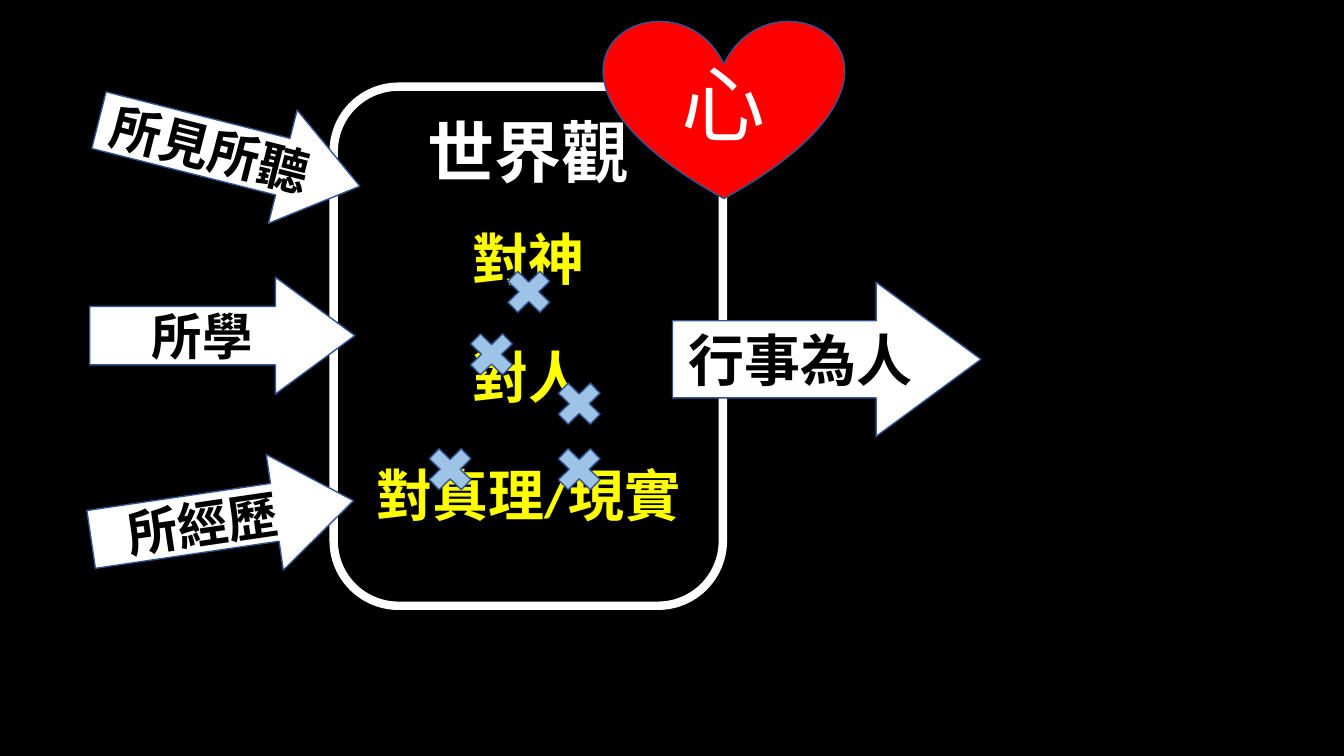
from dataclasses import dataclass

import pptx
import pptx.dml.color
import pptx.enum.shapes
import pptx.enum.text
import pptx.util

PX = 9144
SHAPE = pptx.enum.shapes.MSO_SHAPE
ANCHOR = pptx.enum.text.MSO_ANCHOR
BLACK, WHITE, YELLOW, RED = "000000", "FFFFFF", "FFFF00", "FF0000"
CROSS_BLUE, OUTLINE_BLUE = "9DC3E6", "325491"


@dataclass(frozen=True)
class Line:
    text: str
    size: int
    color: str
    bold: bool = True
    space_before: int = 0


@dataclass(frozen=True)
class Arrow:
    line: Line
    left: int
    top: int
    width: int
    height: int
    rotation: float = 0


@dataclass(frozen=True)
class Cross:
    left: int
    top: int


WORLDVIEW = [
    Line("世界觀", 48, WHITE),
    Line("對神", 40, YELLOW, space_before=24),
    Line("對人", 40, YELLOW, space_before=36),
    Line("對真理/現實", 40, YELLOW, space_before=36),
]
CROSSES = [
    Cross(494, 260),
    Cross(457, 322),
    Cross(416, 436),
    Cross(544, 436),
    Cross(544, 371),
]
ARROWS = [
    Arrow(Line("行事為人", 40, BLACK), 667, 280, 306, 153),
    Arrow(Line("所學", 36, BLACK), 89, 275, 263, 116),
    Arrow(Line("所見所聽", 36, BLACK), 94, 94, 267, 116, 14.2),
    Arrow(Line("所經歷", 36, BLACK), 89, 458, 263, 116, 351.6),
]


def px(n: int) -> int:
    return pptx.util.Emu(n * PX)


def rgb(value: str) -> pptx.dml.color.RGBColor:
    return pptx.dml.color.RGBColor.from_string(value)


def add_shape(s, kind, left: int, top: int, width: int, height: int,
              fill: str, outline: str = OUTLINE_BLUE, weight: int = 1):
    sp = s.shapes.add_shape(kind, px(left), px(top), px(width), px(height))
    sp.shadow.inherit = False
    sp.fill.solid()
    sp.fill.fore_color.rgb = rgb(fill)
    sp.line.color.rgb = rgb(outline)
    sp.line.width = pptx.util.Pt(weight)
    return sp


def write(sp, lines: list[Line], anchor=ANCHOR.MIDDLE) -> None:
    tf = sp.text_frame
    tf.word_wrap = True
    tf.vertical_anchor = anchor
    tf.text = "\n".join(line.text for line in lines)
    for p, line in zip(tf.paragraphs, lines):
        p.alignment = pptx.enum.text.PP_ALIGN.CENTER
        p.space_before = pptx.util.Pt(line.space_before)
        for r in p.runs:
            r.font.name = "Calibri"
            r.font.size = pptx.util.Pt(line.size)
            r.font.bold = line.bold
            r.font.color.rgb = rgb(line.color)


def add_cross(s, cross: Cross) -> None:
    add_shape(s, SHAPE.MATH_MULTIPLY, cross.left, cross.top, 61, 59, CROSS_BLUE)


def add_arrow(s, arrow: Arrow) -> None:
    sp = add_shape(s, SHAPE.RIGHT_ARROW, arrow.left, arrow.top,
                   arrow.width, arrow.height, WHITE)
    sp.adjustments[0] = 0.5
    sp.adjustments[1] = 0.68
    sp.rotation = arrow.rotation
    write(sp, [arrow.line])


def main() -> None:
    prs = pptx.Presentation()
    prs.slide_width = pptx.util.Inches(13.33)
    prs.slide_height = pptx.util.Inches(7.5)
    s = prs.slides.add_slide(prs.slide_layouts[6])
    s.background.fill.solid()
    s.background.fill.fore_color.rgb = rgb(BLACK)

    box = add_shape(s, SHAPE.ROUNDED_RECTANGLE, 331, 86, 386, 515,
                    BLACK, WHITE, 6)
    write(box, WORLDVIEW, ANCHOR.TOP)
    for cross in CROSSES:
        add_cross(s, cross)
    for arrow in ARROWS:
        add_arrow(s, arrow)
    heart = add_shape(s, SHAPE.HEART, 599, 19, 238, 178, RED)
    write(heart, [Line("心", 60, WHITE, bold=False)])

    prs.save("out.pptx")


if __name__ == "__main__":
    main()
